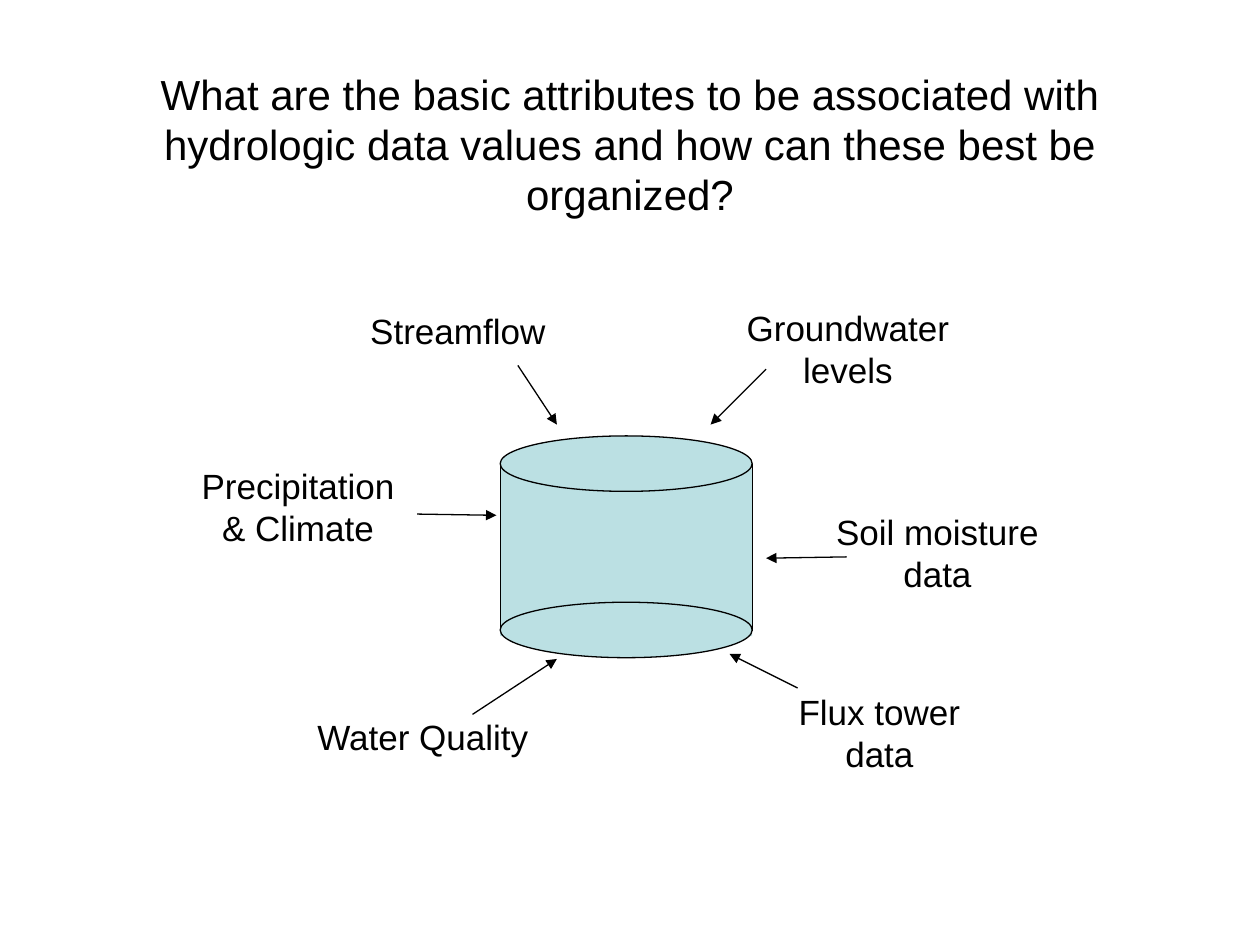
from lxml import etree
from pptx import Presentation
from pptx.dml.color import RGBColor
from pptx.enum.shapes import MSO_CONNECTOR, MSO_SHAPE
from pptx.enum.text import MSO_ANCHOR, PP_ALIGN
from pptx.oxml.ns import qn
from pptx.util import Inches, Pt

RECT, OVAL = MSO_SHAPE.RECTANGLE, MSO_SHAPE.OVAL
STRAIGHT = MSO_CONNECTOR.STRAIGHT
LEFT, CENTER = PP_ALIGN.LEFT, PP_ALIGN.CENTER
MIDDLE, TOP = MSO_ANCHOR.MIDDLE, MSO_ANCHOR.TOP
BLACK, WATER = "000000", "BBE0E3"

prs = Presentation()
prs.slide_width, prs.slide_height = Inches(10), Inches(7.5)
s = prs.slides.add_slide(prs.slide_layouts[6])


def add_text(lines, x, y, w, h, size, align, anchor=TOP, wrap=False):
    tf = s.shapes.add_textbox(Inches(x), Inches(y), Inches(w), Inches(h)).text_frame
    tf.word_wrap = wrap
    tf.vertical_anchor = anchor
    tf.text = "\n".join(lines)
    for p in tf.paragraphs:
        p.alignment = align
        p.font.name = "Arial"
        p.font.size = Pt(size)
        p.font.color.rgb = RGBColor.from_string(BLACK)


def add_line(x1, y1, x2, y2, arrow=False):
    c = s.shapes.add_connector(STRAIGHT, Inches(x1), Inches(y1), Inches(x2), Inches(y2))
    c.line.color.rgb = RGBColor.from_string(BLACK)
    c.line.width = Pt(0.75)
    if arrow:
        etree.SubElement(c.line._get_or_add_ln(), qn("a:tailEnd"), type="triangle")
    etree.SubElement(c._element.spPr, qn("a:effectLst"))


add_text(["What are the basic attributes to be associated with hydrologic data "
          "values and how can these best be organized?"],
         0.5, 0.23, 9, 1.82, 24, CENTER, MIDDLE, True)

# Data store: a body, two elliptical ends and two sides
store_x, store_w = 3.97, 2
for kind, y, h in [(RECT, 3.72, 1.33), (OVAL, 3.46, 0.44), (OVAL, 4.78, 0.44)]:
    sp = s.shapes.add_shape(kind, Inches(store_x), Inches(y), Inches(store_w), Inches(h))
    sp.shadow.inherit = False
    sp.fill.solid()
    sp.fill.fore_color.rgb = RGBColor.from_string(WATER)
    if kind == RECT:
        sp.line.fill.background()
    else:
        sp.line.color.rgb = RGBColor.from_string(BLACK)
        sp.line.width = Pt(0.75)
for x in (store_x + store_w, store_x):
    add_line(x, 3.68, x, 5.01)

# Data sources: lines, box, alignment, wrap, arrow ends
sources = [
    (["Streamflow"], (2.84, 2.41, 1.6, 0.44), LEFT, False, (4.11, 2.9, 4.42, 3.37)),
    (["Precipitation", "& Climate"], (1.49, 3.64, 1.75, 0.77), CENTER, False,
     (3.31, 4.08, 3.94, 4.09)),
    (["Water Quality"], (2.42, 5.63, 1.89, 0.44), LEFT, False, (3.75, 5.67, 4.42, 5.23)),
    (["Flux tower", "data"], (6.23, 5.43, 1.5, 0.77), CENTER, False,
     (6.33, 5.46, 5.79, 5.19)),
    (["Soil moisture data"], (6.45, 4, 1.98, 0.77), CENTER, True, (6.72, 4.42, 6.08, 4.43)),
    (["Groundwater", "levels"], (5.82, 2.38, 1.82, 0.77), CENTER, False,
     (6.08, 2.93, 5.64, 3.37)),
]
for lines, box, align, wrap, ends in sources:
    add_text(lines, *box, 20, align, wrap=wrap)
    add_line(*ends, arrow=True)

prs.save("out.pptx")
